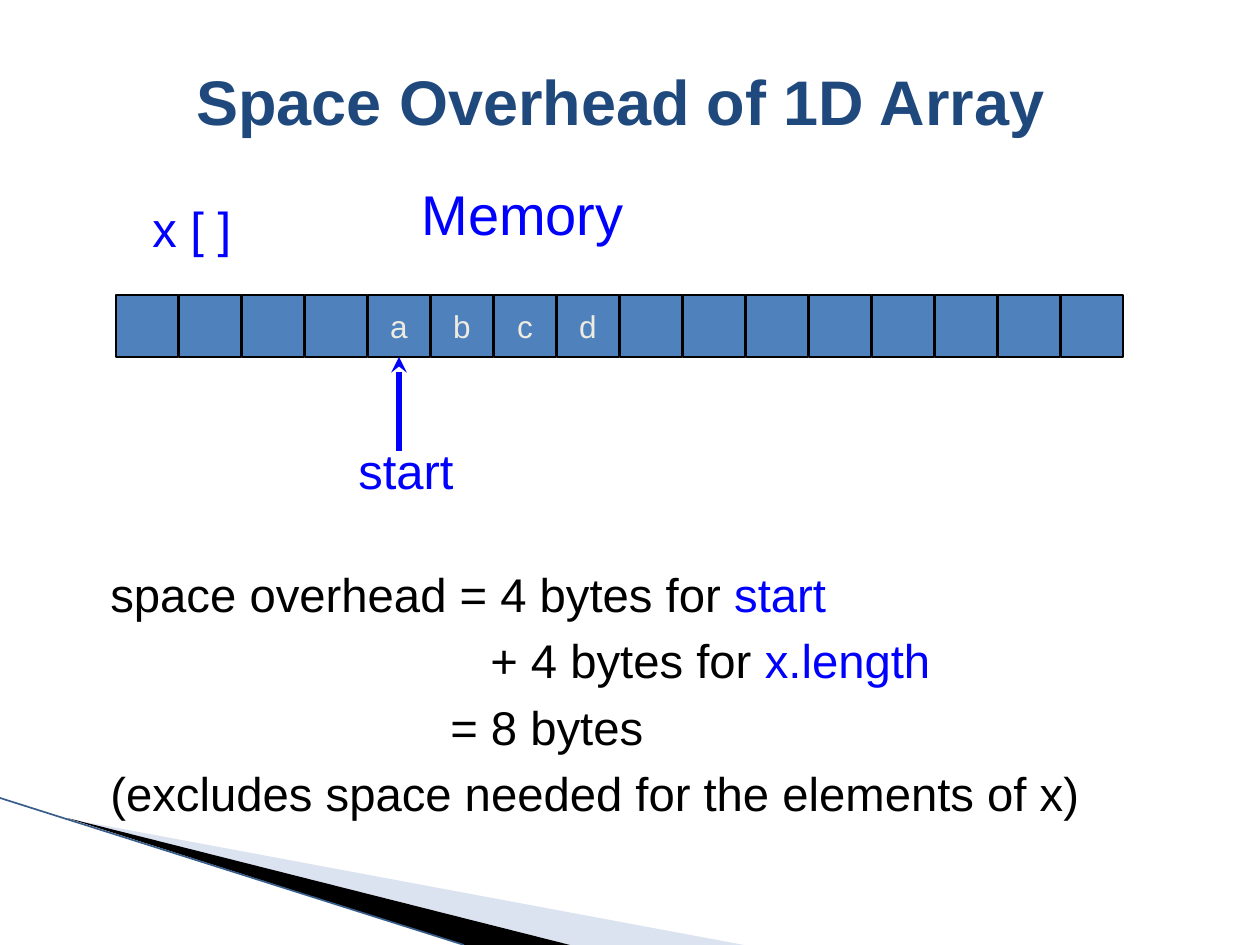
from lxml.etree import SubElement
from pptx import Presentation
from pptx.dml.color import RGBColor
from pptx.enum.shapes import MSO_CONNECTOR, MSO_SHAPE
from pptx.enum.text import MSO_ANCHOR, PP_ALIGN
from pptx.oxml.ns import qn
from pptx.util import Pt

PX = 914400 // 126
FONT = "Arial"
BLACK = RGBColor(0x00, 0x00, 0x00)
BLUE = RGBColor(0x00, 0x00, 0xFF)
NAVY = RGBColor(0x1F, 0x49, 0x7D)
CELL_BLUE = RGBColor(0x4F, 0x81, 0xBD)
CREAM = RGBColor(0xEE, 0xEC, 0xE1)
PALE = RGBColor(0xDC, 0xE3, 0xF0)
EDGE = RGBColor(0x38, 0x5D, 0x8A)

TITLE = "Space Overhead of 1D Array"
MEMORY = ["", "", "", "", "a", "b", "c", "d"] + [""] * 8
START_INDEX = MEMORY.index("a")
CELL_LEFT, CELL_TOP, CELL_SIZE, CELL_PITCH = 116, 295, 62, 63
ARROW_FOOT = 451

# text, left, top, width, height, size in points
LABELS = [
    ("Memory", 409, 173, 305, 81, 32),
    ("start", 346, 434, 147, 72, 28),
    ("x [ ]", 140, 192, 133, 72, 28),
]
# indent in px, then (text, colour) spans
OVERHEAD = [
    (14, [("space overhead = 4 bytes for ", BLACK), ("start", BLUE)]),
    (394, [("+ 4 bytes for ", BLACK), ("x.length", BLUE)]),
    (354, [("= 8 bytes", BLACK)]),
    (14, [("(excludes space needed for the elements of x)", BLACK)]),
]
WEDGES = [
    (PALE, [(69, 819), (744, 945), (570, 945)]),
    (BLACK, [(67, 818), (570, 945), (464, 945)]),
]


def px(*lengths):
    return [length * PX for length in lengths]


def set_font(font, size, color, bold=False):
    font.name, font.size, font.bold = FONT, Pt(size), bold
    font.color.rgb = color


def add_box(page, left, top, width, height):
    frame = page.shapes.add_textbox(*px(left, top, width, height)).text_frame
    frame.word_wrap = True
    return frame


def add_line(page, start, end, color, width):
    line = page.shapes.add_connector(MSO_CONNECTOR.STRAIGHT, *px(*start, *end))
    line.line.color.rgb = color
    line.line.width = Pt(width)
    SubElement(line.element.spPr, qn("a:effectLst"))
    return line


def add_corner(page):
    for color, points in WEDGES:
        builder = page.shapes.build_freeform(*points[0], scale=PX)
        builder.add_line_segments(points[1:], close=True)
        wedge = builder.convert_to_shape()
        wedge.shadow.inherit = False
        wedge.fill.solid()
        wedge.fill.fore_color.rgb = color
        wedge.line.fill.background()
    add_line(page, (0, 798), (464, 945), EDGE, 0.95)


def add_title(page):
    title = page.shapes.title
    title.left, title.top, title.width, title.height = px(22, 21, 1197, 158)
    title.text_frame.text = TITLE
    title.text_frame.vertical_anchor = MSO_ANCHOR.MIDDLE
    para = title.text_frame.paragraphs[0]
    para.alignment = PP_ALIGN.CENTER
    set_font(para.font, 36, NAVY, bold=True)


def add_memory(page):
    cells = []
    for index, letter in enumerate(MEMORY):
        left = CELL_LEFT + index * CELL_PITCH
        cell = page.shapes.add_shape(
            MSO_SHAPE.RECTANGLE, *px(left, CELL_TOP, CELL_SIZE, CELL_SIZE))
        cell.shadow.inherit = False
        cell.fill.solid()
        cell.fill.fore_color.rgb = CELL_BLUE
        cell.line.color.rgb = BLACK
        cell.line.width = Pt(1)
        if letter:
            cell.text_frame.text = letter
            para = cell.text_frame.paragraphs[0]
            para.alignment = PP_ALIGN.CENTER
            set_font(para.font, 18, CREAM)
        cells.append(cell)
    return cells


def add_start_arrow(page, cell):
    middle = CELL_LEFT + START_INDEX * CELL_PITCH + CELL_SIZE // 2
    arrow = add_line(page, (middle, ARROW_FOOT),
                     (middle, CELL_TOP + CELL_SIZE), BLUE, 3)
    arrow.end_connect(cell, 2)
    SubElement(arrow.line._get_or_add_ln(), qn("a:tailEnd"), type="stealth")


def add_labels(page):
    for text, left, top, width, height, size in LABELS:
        para = add_box(page, left, top, width, height).paragraphs[0]
        para.text = text
        set_font(para.font, size, BLUE)


def add_overhead(page):
    frame = add_box(page, 84, 559, 1071, 280)
    for index, (indent, spans) in enumerate(OVERHEAD):
        para = frame.add_paragraph() if index else frame.paragraphs[0]
        para._p.get_or_add_pPr().set("marL", str(indent * PX))
        if index:
            para.space_before = Pt(5.5)
        set_font(para.font, 27, BLACK)
        for text, color in spans:
            span = para.add_run()
            span.text = text
            set_font(span.font, 27, color)


def main():
    deck = Presentation()
    deck.slide_width, deck.slide_height = px(1260, 945)
    page = deck.slides.add_slide(deck.slide_layouts[5])
    add_corner(page)
    add_title(page)
    add_overhead(page)
    cells = add_memory(page)
    add_start_arrow(page, cells[START_INDEX])
    add_labels(page)
    deck.save("out.pptx")


if __name__ == "__main__":
    main()
